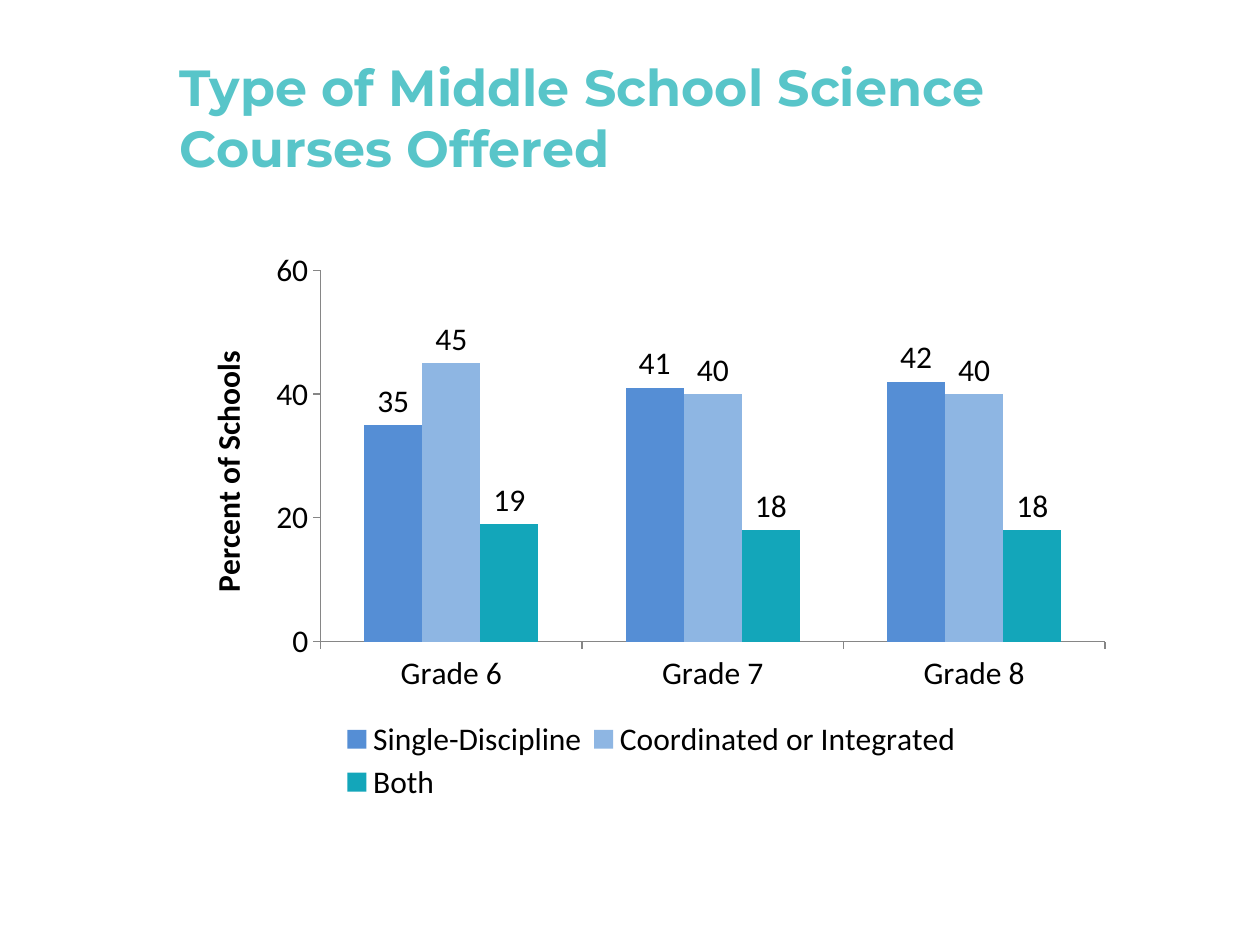
from lxml import etree
from pptx import Presentation
from pptx.chart.data import CategoryChartData
from pptx.dml.color import RGBColor
from pptx.enum.chart import (XL_CHART_TYPE as CT, XL_LABEL_POSITION as LABEL,
                             XL_LEGEND_POSITION as LEGEND, XL_TICK_MARK as TICK)
from pptx.enum.text import MSO_ANCHOR
from pptx.oxml.ns import qn
from pptx.util import Inches, Pt

BLACK = RGBColor(0x00, 0x00, 0x00)
GREY = RGBColor(0x86, 0x86, 0x86)
TEAL = RGBColor(0x58, 0xC5, 0xC9)
BLUE = RGBColor(0x55, 0x8E, 0xD5)
LIGHT_BLUE = RGBColor(0x8E, 0xB6, 0xE3)
SEA = RGBColor(0x13, 0xA6, 0xBA)

GRADES = ["Grade 6", "Grade 7", "Grade 8"]
COURSES = [
    ("Single-Discipline", (35, 41, 42), BLUE),
    ("Coordinated or Integrated", (45, 40, 40), LIGHT_BLUE),
    ("Both", (19, 18, 18), SEA),
]
TITLE_FONT = {"name": "Montserrat", "size": Pt(29), "bold": True}
CHART_FONT = {"name": "Calibri", "size": Pt(18), "bold": False}

# Shares of the slide: left, top, width, height
TITLE_BOX = (0.133, 0.04, 0.817, 0.167)
CHART_BOX = (0.142, 0.256, 0.75, 0.6)
# Shares of the chart: left, top, width, height
PLOT_BOX = (0.15, 0.05, 0.83, 0.655)
LEGEND_BOX = (0.165, 0.835, 0.67, 0.16)


def set_font(font, values, color):
    for name, value in values.items():
        setattr(font, name, value)
    font.color.rgb = color


def place(prs, box):
    sides = (prs.slide_width, prs.slide_height) * 2
    return [int(share * side) for share, side in zip(box, sides)]


def set_layout(parent, before, box, inner=False):
    """Fix a chart part at shares of the chart, after the child named before."""
    for old in parent.findall(qn("c:layout")):
        parent.remove(old)
    layout = etree.Element(qn("c:layout"))
    manual = etree.SubElement(layout, qn("c:manualLayout"))
    settings = [("layoutTarget", "inner")] if inner else []
    settings += [("xMode", "edge"), ("yMode", "edge"), *zip("xywh", box)]
    for tag, value in settings:
        etree.SubElement(manual, qn(f"c:{tag}")).set("val", str(value))
    if before is None:
        parent.insert(0, layout)
    else:
        parent.find(qn(before)).addnext(layout)


def add_title(slide, box, text):
    tf = slide.shapes.add_textbox(*box).text_frame
    tf.word_wrap = True
    tf.vertical_anchor = MSO_ANCHOR.MIDDLE
    r = tf.paragraphs[0].add_run()
    r.text = text
    set_font(r.font, TITLE_FONT, TEAL)


def add_course_chart(slide, box):
    data = CategoryChartData()
    data.categories = GRADES
    for name, values, _ in COURSES:
        data.add_series(name, values)
    chart = slide.shapes.add_chart(CT.COLUMN_CLUSTERED, *box, data).chart
    chart.has_title = False
    set_font(chart.font, CHART_FONT, BLACK)

    # Columns and their values
    plot = chart.plots[0]
    plot.gap_width, plot.overlap = 150, 0
    plot.vary_by_categories = False
    for series, (_, _, color) in zip(plot.series, COURSES):
        series.format.fill.solid()
        series.format.fill.fore_color.rgb = color
        labels = series.data_labels
        labels.show_value = True
        labels.position = LABEL.OUTSIDE_END

    # Axes
    for axis in (chart.category_axis, chart.value_axis):
        axis.has_major_gridlines = False
        axis.major_tick_mark = TICK.OUTSIDE
        axis.minor_tick_mark = TICK.NONE
        axis.format.line.color.rgb = GREY
        axis.format.line.width = Pt(0.75)
    scale = chart.value_axis
    scale.minimum_scale, scale.maximum_scale, scale.major_unit = 0, 60, 20
    r = scale.axis_title.text_frame.paragraphs[0].add_run()
    r.text = "Percent of Schools"
    set_font(r.font, {**CHART_FONT, "bold": True}, BLACK)

    # Legend and fixed layout
    chart.has_legend = True
    legend = chart.legend
    legend.position = LEGEND.BOTTOM
    legend.include_in_layout = False
    root = chart.element
    set_layout(root.find(".//" + qn("c:plotArea")), None, PLOT_BOX, inner=True)
    set_layout(root.find(".//" + qn("c:legend")), "c:legendPos", LEGEND_BOX)


def main():
    prs = Presentation()
    prs.slide_width, prs.slide_height = Inches(10), Inches(7.5)
    slide = prs.slides.add_slide(prs.slide_layouts[6])
    add_course_chart(slide, place(prs, CHART_BOX))
    add_title(slide, place(prs, TITLE_BOX),
              "Type of Middle School Science Courses Offered")
    prs.save("out.pptx")


if __name__ == "__main__":
    main()
